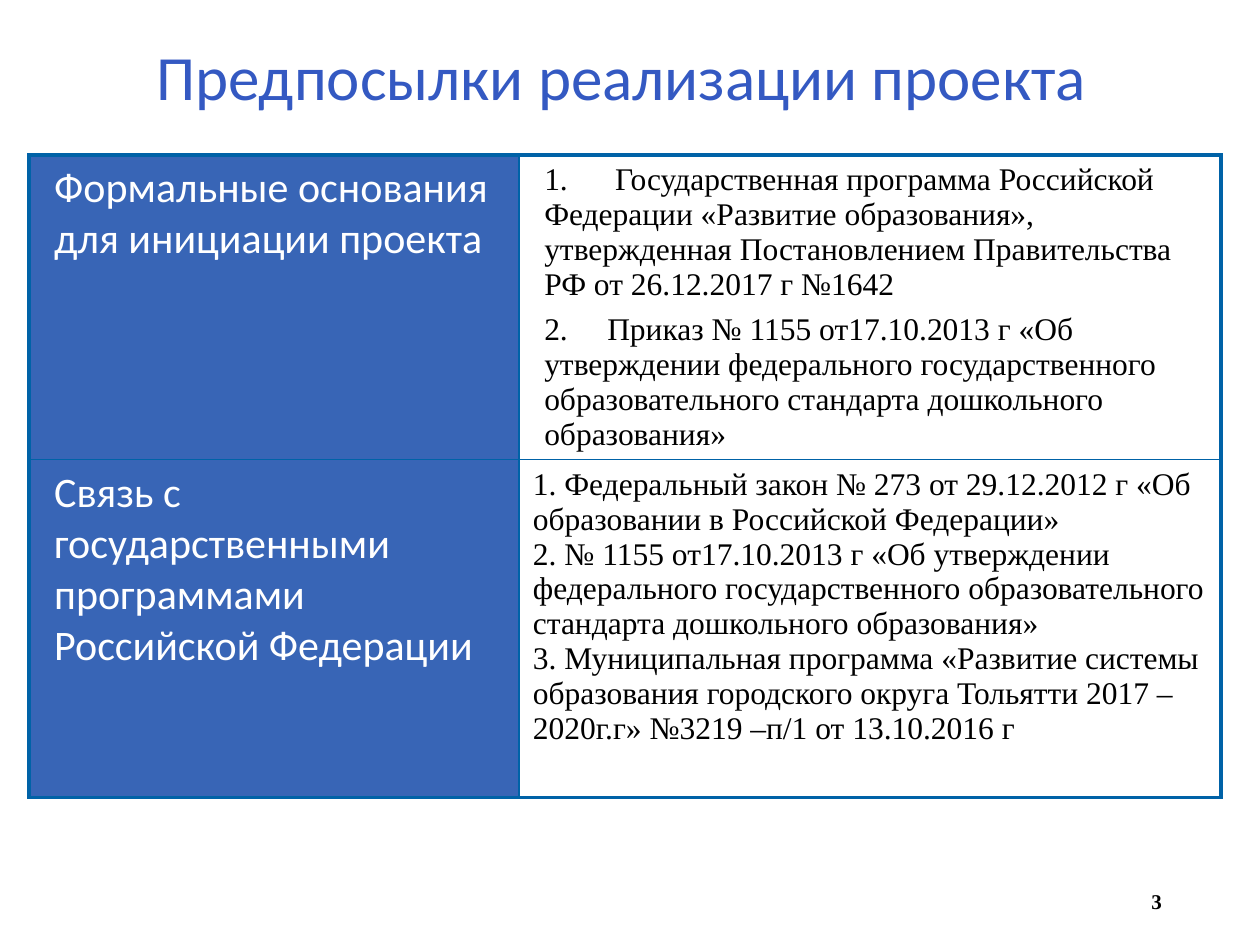
"""Build the slide on the grounds for starting the project."""
from lxml import etree
from pptx import Presentation
from pptx import util as u
from pptx.dml.color import RGBColor
from pptx.enum import text
from pptx.oxml.ns import qn

COLORS = {"title": "3459C2", "border": "0062A7", "head": "3865B6",
          "white": "FFFFFF", "black": "000000"}
SANS, SERIF = "Calibri", "Times New Roman"
TITLE = "Предпосылки реализации проекта"
PAGE = "3"
ROWS = [
    {"head": "Формальные основания для инициации проекта",
     "body": ["1.\t Государственная программа Российской Федерации «Развитие образования», "
              "утвержденная Постановлением Правительства РФ от 26.12.2017 г №1642",
              "2.\tПриказ № 1155 от17.10.2013 г «Об утверждении федерального государственного "
              "образовательного стандарта дошкольного образования»"],
     "height": 2.4, "indented": True},
    {"head": "Связь с государственными программами Российской Федерации",
     "body": ["1. Федеральный закон № 273 от 29.12.2012 г «Об образовании в Российской Федерации»",
              "2. № 1155 от17.10.2013 г «Об утверждении федерального государственного "
              "образовательного стандарта дошкольного образования»",
              "3. Муниципальная программа «Развитие системы образования городского округа "
              "Тольятти 2017 – 2020г.г» №3219 –п/1 от 13.10.2016 г"],
     "height": 2.68, "indented": False},
]
COLUMNS = [3.89, 5.57]
THIN, THICK = 1, 2.25


def add_run(p, words, size, font, color, bold=False):
    r = p.add_run()
    r.text = words
    r.font.size, r.font.name, r.font.bold = u.Pt(size), font, bold
    r.font.color.rgb = RGBColor.from_string(COLORS[color])


def set_borders(cell, widths):
    tc_pr = cell._tc.get_or_add_tcPr()
    for side, width in zip("LRTB", widths):
        ln = etree.SubElement(tc_pr, qn(f"a:ln{side}"), w=str(u.Pt(width)))
        fill = etree.SubElement(ln, qn("a:solidFill"))
        etree.SubElement(fill, qn("a:srgbClr"), val=COLORS["border"])


def fill_cell(cell, paragraphs, indented, fill, size, font, color):
    cell.fill.solid()
    cell.fill.fore_color.rgb = RGBColor.from_string(COLORS[fill])
    cell.margin_left = cell.margin_right = u.Inches(0.11)
    cell.margin_top = cell.margin_bottom = u.Inches(0.06)
    tf = cell.text_frame
    for i, words in enumerate(paragraphs):
        p = tf.add_paragraph() if i else tf.paragraphs[0]
        if indented:
            p.space_before = u.Pt(6)
            p._p.get_or_add_pPr().set("marL", str(u.Inches(0.09)))
        add_run(p, words, size, font, color)


def add_title(s):
    sp = s.shapes.title
    sp.left, sp.top, sp.width, sp.height = map(u.Inches, (0.85, 0.42, 8.92, 0.54))
    tf = sp.text_frame
    tf.auto_size = text.MSO_AUTO_SIZE.NONE
    tf.vertical_anchor = text.MSO_ANCHOR.BOTTOM
    tf.margin_left = u.Inches(0.39)
    p = tf.paragraphs[0]
    p.alignment, p.line_spacing = text.PP_ALIGN.LEFT, 0.9
    add_run(p, TITLE, 36, SANS, "title")


def add_grounds(s):
    height = sum(row["height"] for row in ROWS)
    frame = s.shapes.add_table(len(ROWS), len(COLUMNS), u.Inches(0.23), u.Inches(1.23),
                               u.Inches(sum(COLUMNS)), u.Inches(height))
    table = frame.table
    for column, width in zip(table.columns, COLUMNS):
        column.width = u.Inches(width)
    last_row, last_col = len(ROWS) - 1, len(COLUMNS) - 1
    for i, row in enumerate(ROWS):
        table.rows[i].height = u.Inches(row["height"])
        for j in range(len(COLUMNS)):
            outer = (j == 0, j == last_col, i == 0, i == last_row)
            set_borders(table.cell(i, j), [THICK if edge else THIN for edge in outer])
        fill_cell(table.cell(i, 0), [row["head"]], True, "head", 24, SANS, "white")
        fill_cell(table.cell(i, 1), row["body"], row["indented"], "white", 18, SERIF, "black")


def add_page_number(s):
    sp = s.shapes.add_textbox(*map(u.Inches, (7.07, 6.95, 2.25, 0.4)))
    tf = sp.text_frame
    tf.word_wrap = True
    tf.vertical_anchor = text.MSO_ANCHOR.MIDDLE
    p = tf.paragraphs[0]
    p.alignment = text.PP_ALIGN.RIGHT
    add_run(p, PAGE, 12, SERIF, "black", bold=True)


def main():
    prs = Presentation()
    prs.slide_width, prs.slide_height = u.Inches(10), u.Inches(7.5)
    s = prs.slides.add_slide(prs.slide_layouts[5])
    add_title(s)
    add_grounds(s)
    add_page_number(s)
    prs.save("out.pptx")


if __name__ == "__main__":
    main()
